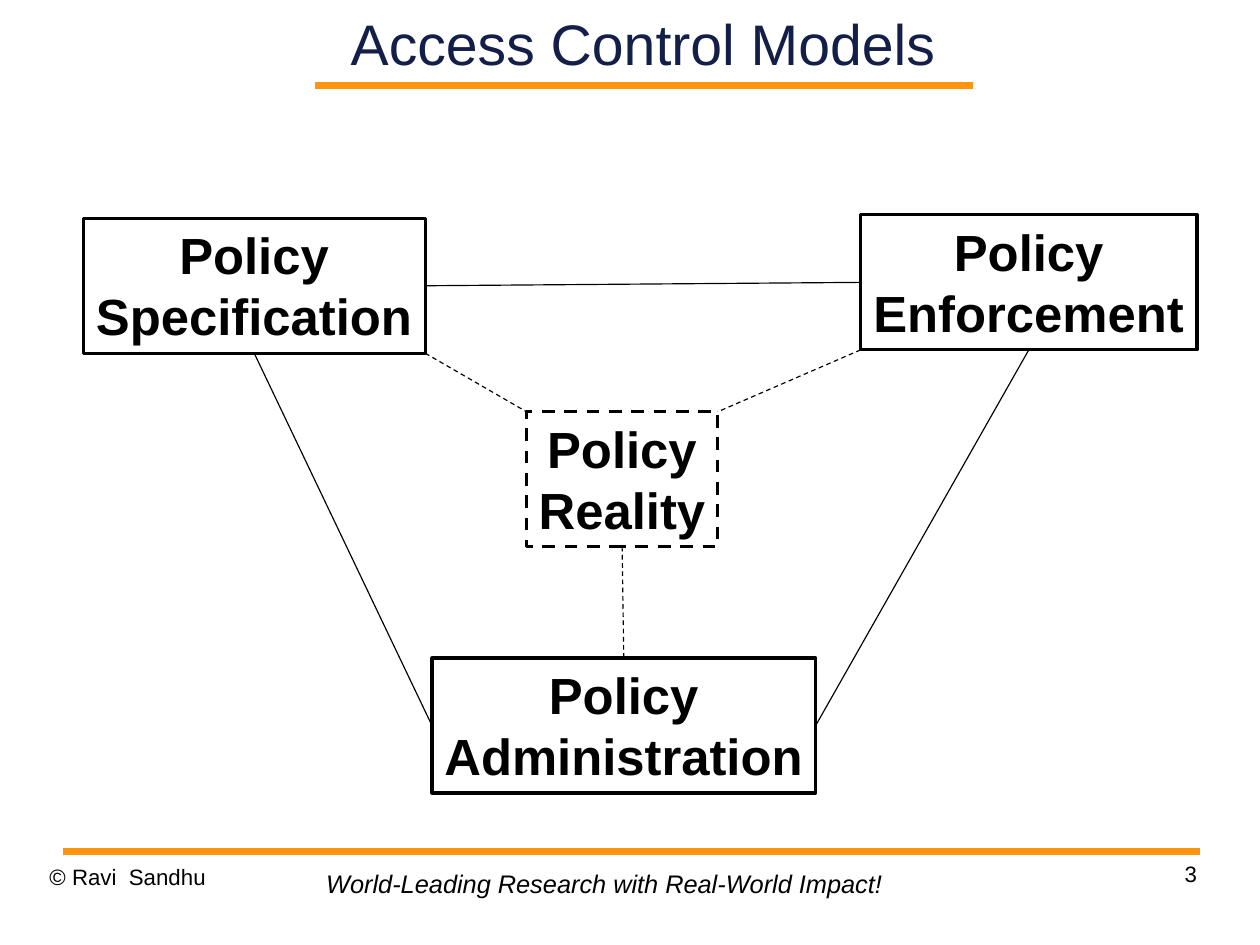
from dataclasses import dataclass

from lxml.etree import SubElement
from pptx import Presentation
from pptx.dml.color import RGBColor
from pptx.enum.dml import MSO_LINE
from pptx.enum.shapes import MSO_CONNECTOR, MSO_SHAPE
from pptx.enum.text import MSO_ANCHOR, PP_ALIGN
from pptx.oxml.ns import qn
from pptx.util import Pt

PX = 9000
TOP, LEFT, BOTTOM, RIGHT = range(4)
BOX_H = 120


@dataclass(frozen=True)
class Theme:
    font: str = "Arial"
    ink: RGBColor = RGBColor(0x00, 0x00, 0x00)
    navy: RGBColor = RGBColor(0x13, 0x1F, 0x49)
    orange: RGBColor = RGBColor(0xFF, 0x95, 0x0E)
    title: int = 36
    box: int = 32
    motto: int = 16
    footer: int = 14
    rule: float = 4.31
    border: float = 2
    link: float = 0.75


THEME = Theme()


def emu(*lengths):
    return [n * PX for n in lengths]


def style_line(line, color, width, dashed=False):
    line.color.rgb = color
    line.width = Pt(width)
    if dashed:
        line.dash_style = MSO_LINE.DASH


def add_line(s, start, end, color, width, dashed=False):
    c = s.shapes.add_connector(MSO_CONNECTOR.STRAIGHT, *emu(*start, *end))
    style_line(c.line, color, width, dashed)
    SubElement(c._element.spPr, qn("a:effectLst"))
    return c


def set_font(p, size, color=THEME.ink, bold=False, italic=False):
    f = p.font
    f.name, f.size, f.bold, f.italic = THEME.font, Pt(size), bold, italic
    f.color.rgb = color


def add_text(s, box, text, size, align=PP_ALIGN.LEFT, color=THEME.ink,
             italic=False, inset=(0, 0), anchor=MSO_ANCHOR.TOP):
    tf = s.shapes.add_textbox(*emu(*box)).text_frame
    tf.word_wrap = True
    tf.vertical_anchor = anchor
    tf.margin_left, tf.margin_right = emu(inset[0], inset[0])
    tf.margin_top, tf.margin_bottom = emu(inset[1], inset[1])
    p = tf.paragraphs[0]
    p.text = text
    p.alignment = align
    set_font(p, size, color, italic=italic)


def add_header(s, x, y, w, h):
    add_line(s, (x + 35, y + h), (x + w - 33, y + h), THEME.orange, THEME.rule)
    add_text(s, (x, y, w, h), "Access Control Models", THEME.title,
             PP_ALIGN.CENTER, THEME.navy, anchor=MSO_ANCHOR.MIDDLE)


def add_footer(s, x, y, w, h):
    add_line(s, (x + 12, y), (x + w + 3, y), THEME.orange, THEME.rule)
    add_text(s, (x + w - 261, y + 8, 261, h), "3", THEME.footer, PP_ALIGN.RIGHT)
    add_text(s, (x + 236, y + 10, 516, 38),
             "World-Leading Research with Real-World Impact!",
             THEME.motto, italic=True, inset=(10, 5))
    add_text(s, (x, y + 10, 261, h), "© Ravi  Sandhu", THEME.footer)


def add_policy(s, x, y, w, name, dashed=False):
    sp = s.shapes.add_shape(MSO_SHAPE.RECTANGLE, *emu(x, y, w, BOX_H))
    sp.shadow.inherit = False
    sp.fill.background()
    style_line(sp.line, THEME.ink, THEME.border, dashed)
    tf = sp.text_frame
    tf.word_wrap = False
    tf.vertical_anchor = MSO_ANCHOR.TOP
    tf.text = f"Policy\n{name}"
    for p in tf.paragraphs:
        p.alignment = PP_ALIGN.CENTER
        set_font(p, THEME.box, bold=True)
    return sp


def join(s, a, a_side, b, b_side, dashed=False):
    c = add_line(s, (0, 0), (0, 0), THEME.ink, THEME.link, dashed)
    c.begin_connect(a, a_side)
    c.end_connect(b, b_side)


def add_diagram(s, x, y, w, h):
    spec = add_policy(s, x, y + 3, 304, "Specification")
    reality = add_policy(s, x + 394, y + 175, 170, "Reality", dashed=True)
    enforce = add_policy(s, x + w - 299, y, 299, "Enforcement")
    admin = add_policy(s, x + 310, y + h - BOX_H, 341, "Administration")
    join(s, spec, BOTTOM, admin, LEFT)
    join(s, spec, RIGHT, enforce, LEFT)
    join(s, enforce, BOTTOM, admin, RIGHT)
    for start, end in (((x + 304, y + 3 + BOX_H), (x + 394, y + 175)),
                       ((x + w - 299, y + BOX_H), (x + 564, y + 175))):
        add_line(s, start, end, THEME.ink, THEME.link, dashed=True)
    join(s, reality, BOTTOM, admin, TOP, dashed=True)


def main():
    prs = Presentation()
    prs.slide_width, prs.slide_height = emu(1120, 840)
    s = prs.slides.add_slide(prs.slide_layouts[6])
    add_header(s, 245, 0, 653, 76)
    add_footer(s, 44, 757, 1020, 58)
    add_diagram(s, 74, 191, 990, 514)
    prs.save("out.pptx")


if __name__ == "__main__":
    main()
